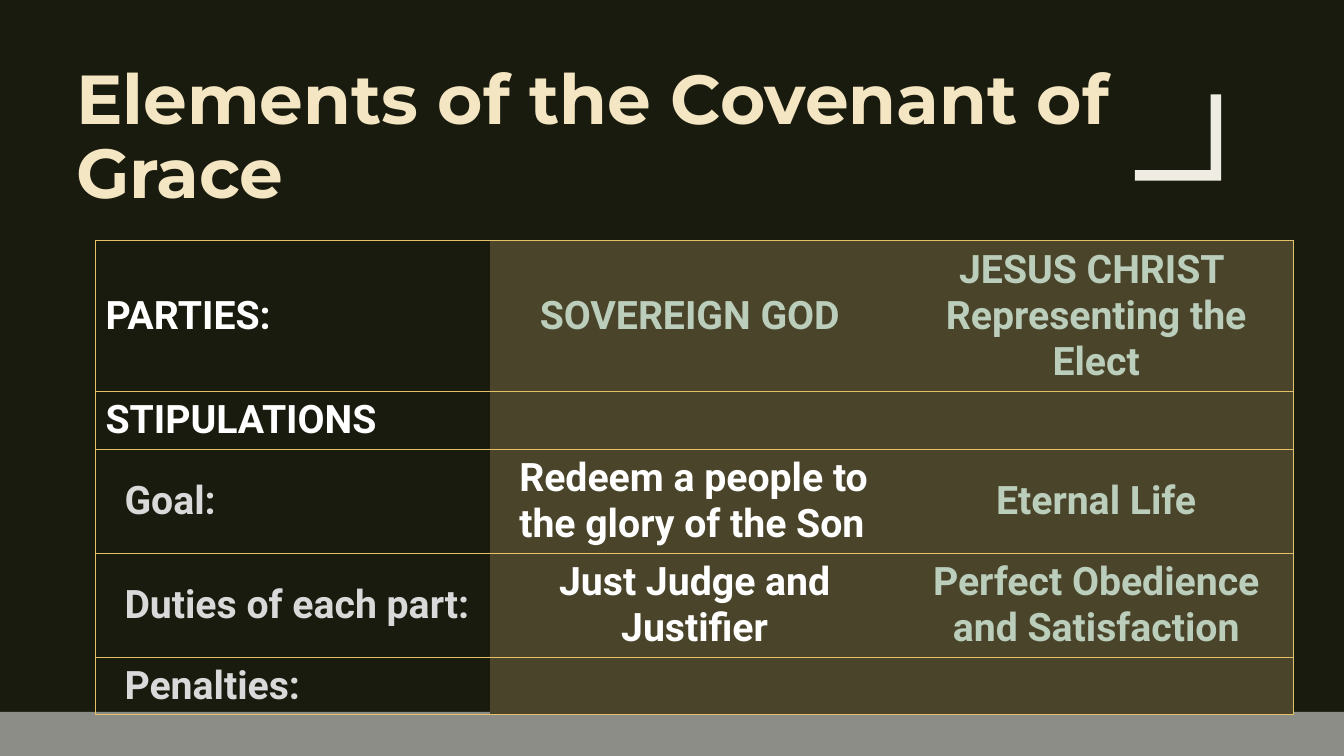
from dataclasses import dataclass

from lxml import etree
from pptx import Presentation
from pptx import util as u
from pptx.dml.color import RGBColor
from pptx.enum import text
from pptx.oxml import ns

PX = 9525
WIDTH, HEIGHT = 1280, 720


@dataclass(frozen=True)
class Theme:
    background: str = "191B0E"
    title: str = "F5E6C3"
    corner: str = "EFEDE3"
    footer: str = "8C8D86"
    panel: str = "4A452A"
    border: str = "E6C069"
    white: str = "FFFFFF"
    grey: str = "D9D9D9"
    green: str = "BBCDBB"
    title_font: str = "Montserrat"
    table_font: str = "Roboto"
    title_size: float = 49.5
    table_size: float = 28
    border_width: float = 0.5


THEME = Theme()
INDENT = 18
LEFT, CENTER = text.PP_ALIGN.LEFT, text.PP_ALIGN.CENTER

COLUMNS = [376, 389, 376]
ROWS = [140, 53, 97, 97, 53]
CELLS = [
    [(["PARTIES:"], THEME.white, LEFT, 0),
     (["SOVEREIGN GOD "], THEME.green, CENTER, 0),
     (["JESUS CHRIST ", "Representing the Elect"], THEME.green, CENTER, 0)],
    [(["STIPULATIONS"], THEME.white, LEFT, 0), None, None],
    [(["Goal:"], THEME.grey, LEFT, INDENT),
     (["Redeem a people to the glory of the Son"], THEME.white, LEFT, INDENT),
     (["Eternal Life"], THEME.green, CENTER, 0)],
    [(["Duties of each part:"], THEME.grey, LEFT, INDENT),
     (["Just Judge and Justifier"], THEME.white, CENTER, 0),
     (["Perfect Obedience and Satisfaction"], THEME.green, CENTER, 0)],
    [(["Penalties:"], THEME.grey, LEFT, INDENT), None, None],
]


def px(*lengths):
    return [u.Emu(length * PX) for length in lengths]


def paint(shape, color):
    shape.fill.solid()
    shape.fill.fore_color.rgb = RGBColor.from_string(color)
    shape.line.fill.background()
    shape.shadow.inherit = False


def add_run(paragraph, words, font, size, color):
    run = paragraph.add_run()
    run.text = words
    run.font.name = font
    run.font.size = u.Pt(size)
    run.font.bold = True
    run.font.color.rgb = RGBColor.from_string(color)


def add_outline(slide, points, color):
    builder = slide.shapes.build_freeform(*points[0], scale=PX)
    builder.add_line_segments(points[1:], close=True)
    paint(builder.convert_to_shape(), color)


def add_title(slide, words):
    frame = slide.shapes.add_textbox(*px(63, 53, 1066, 155)).text_frame
    frame.word_wrap = True
    frame.vertical_anchor = text.MSO_ANCHOR.BOTTOM
    paragraph = frame.paragraphs[0]
    paragraph.line_spacing = 0.89
    add_run(paragraph, words, THEME.title_font, THEME.title_size, THEME.title)


def set_borders(cell, visible_sides):
    properties = cell._tc.get_or_add_tcPr()
    for position, side in enumerate("LRTB"):
        line = etree.Element(ns.qn(f"a:ln{side}"), w=str(u.Pt(THEME.border_width)))
        if side in visible_sides:
            fill = etree.SubElement(line, ns.qn("a:solidFill"))
            etree.SubElement(fill, ns.qn("a:srgbClr"), val=THEME.border)
        else:
            etree.SubElement(line, ns.qn("a:noFill"))
        properties.insert(position, line)


def fill_cell(cell, lines, color, alignment, indent):
    cell.vertical_anchor = text.MSO_ANCHOR.MIDDLE
    frame = cell.text_frame
    for index, words in enumerate(lines):
        paragraph = frame.add_paragraph() if index else frame.paragraphs[0]
        paragraph.alignment = alignment
        if indent:
            properties = paragraph._p.get_or_add_pPr()
            properties.set("marL", str(indent * PX))
            properties.set("indent", "0")
        add_run(paragraph, words, THEME.table_font, THEME.table_size, color)


def add_covenant_table(slide):
    frame = slide.shapes.add_table(
        len(ROWS), len(COLUMNS), *px(91, 229, sum(COLUMNS), sum(ROWS)))
    table = frame.table
    table.first_row = table.horz_banding = False
    for column, width in zip(table.columns, px(*COLUMNS)):
        column.width = width
    for row, height in zip(table.rows, px(*ROWS)):
        row.height = height
    for row_index, contents in enumerate(CELLS):
        for column_index, content in enumerate(contents):
            cell = table.cell(row_index, column_index)
            if column_index:
                cell.fill.solid()
                cell.fill.fore_color.rgb = RGBColor.from_string(THEME.panel)
            else:
                cell.fill.background()
            set_borders(cell, "TB" + ("L", "", "R")[column_index])
            if content:
                fill_cell(cell, *content)


def main():
    presentation = Presentation()
    presentation.slide_width, presentation.slide_height = px(WIDTH, HEIGHT)
    slide = presentation.slides.add_slide(presentation.slide_layouts[6])
    slide.background.fill.solid()
    slide.background.fill.fore_color.rgb = RGBColor.from_string(THEME.background)

    add_outline(slide, [(1153, 90), (1163, 90), (1163, 172), (1081, 172),
                        (1081, 162), (1153, 162)], THEME.corner)
    add_title(slide, "Elements of the Covenant of Grace")
    footer = slide.shapes.add_shape(1, *px(0, 678, WIDTH, 42))
    paint(footer, THEME.footer)
    add_covenant_table(slide)
    presentation.save("out.pptx")


if __name__ == "__main__":
    main()
